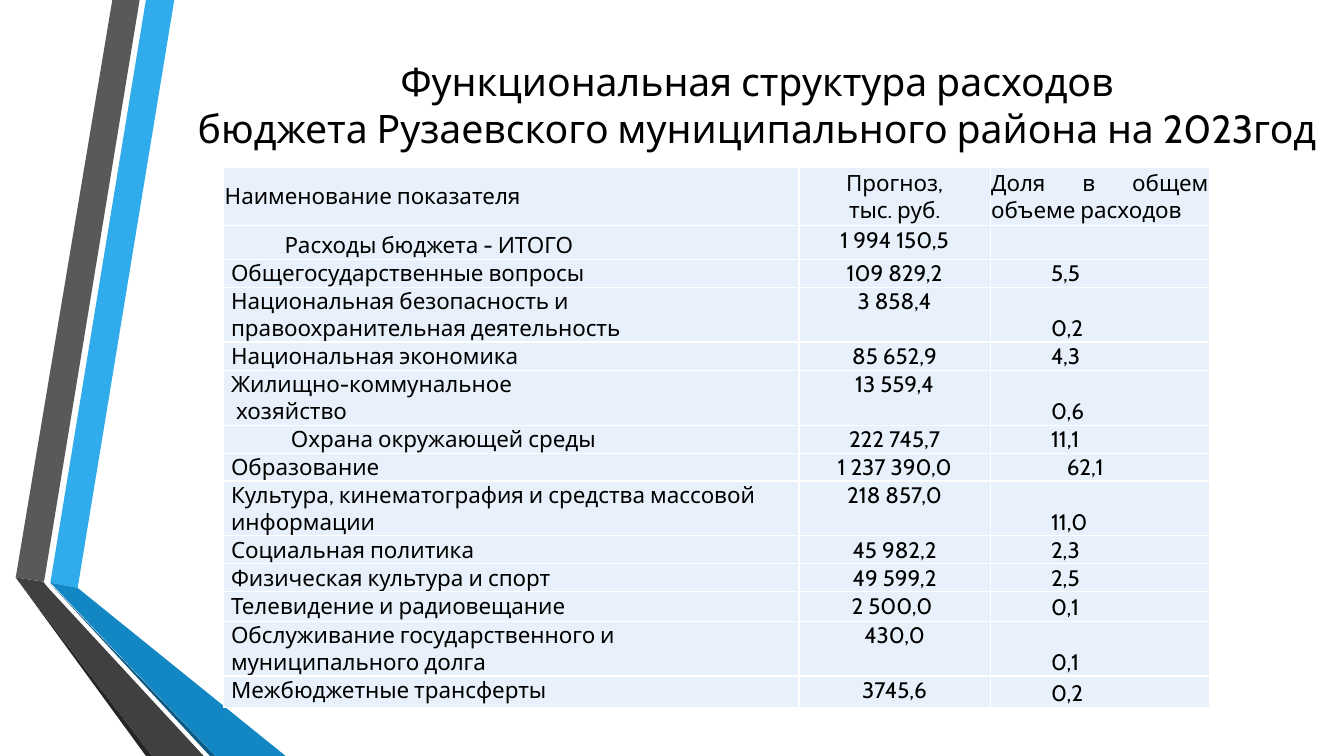
"""Build the slide on the functional structure of district budget spending."""
from lxml import etree
from pptx import Presentation
from pptx.dml.color import RGBColor
from pptx.enum.text import MSO_ANCHOR, PP_ALIGN
from pptx.oxml.ns import qn
from pptx.util import Pt

PX = 9525
FONT = "Cabin"
TOP, MIDDLE, BOTTOM = MSO_ANCHOR.TOP, MSO_ANCHOR.MIDDLE, MSO_ANCHOR.BOTTOM
LEFT, CENTER, JUSTIFY = PP_ALIGN.LEFT, PP_ALIGN.CENTER, PP_ALIGN.JUSTIFY
COLORS = {
    "text": "000000", "cell": "E8F1FB", "border": "FFFFFF",
    "sky": "30ACEC", "gray": "595959", "black": "262626",
    "navy": "0C5A82", "blue": "1287C3", "coal": "404040",
}


def add_run(para, text, size):
    run = para.add_run()
    run.text = text
    run.font.name = FONT
    run.font.size = Pt(size)
    run.font.color.rgb = RGBColor.from_string(COLORS["text"])


def add_borders(cell):
    props = cell._tc.get_or_add_tcPr()
    for index, side in enumerate(("lnL", "lnR", "lnT", "lnB")):
        line = etree.Element(qn(f"a:{side}"), w=str(Pt(1)))
        fill = etree.SubElement(line, qn("a:solidFill"))
        etree.SubElement(fill, qn("a:srgbClr"), val=COLORS["border"])
        props.insert(index, line)


deck = Presentation()
deck.slide_width, deck.slide_height = 1280 * PX, 720 * PX
slide = deck.slides.add_slide(deck.slide_layouts[6])

ribbons = [
    ("sky", [(48, 555), (74, 560), (166, 0), (139, 0)]),
    ("gray", [(133, 0), (107, 0), (15, 550), (42, 554)]),
    ("black", [(15, 550), (139, 720), (145, 720)]),
    ("navy", [(48, 556), (200, 720), (205, 720)]),
    ("blue", [(48, 555), (205, 720), (272, 720), (74, 560)]),
    ("coal", [(194, 720), (46, 560), (41, 554), (15, 550), (145, 720)]),
]
for color, points in ribbons:
    outline = slide.shapes.build_freeform(*points[0], scale=PX)
    outline.add_line_segments(points[1:], close=True)
    ribbon = outline.convert_to_shape()
    ribbon.shadow.inherit = False
    ribbon.fill.solid()
    ribbon.fill.fore_color.rgb = RGBColor.from_string(COLORS[color])
    ribbon.line.fill.background()

title = slide.shapes.add_textbox(173 * PX, 16 * PX, 1096 * PX, 166 * PX)
frame = title.text_frame
frame.word_wrap = True
frame.vertical_anchor = MIDDLE
para = frame.paragraphs[0]
para.alignment = CENTER
add_run(para, "Функциональная структура расходов", 28)
para.add_line_break()
add_run(para, "бюджета Рузаевского муниципального района на 2023год", 28)

rows = [
    (56, "Наименование показателя", "Прогноз,\nтыс. руб.", "Доля в общем объеме расходов"),
    (32, "Расходы бюджета - ИТОГО", "1 994 150,5", ""),
    (25, "Общегосударственные вопросы", "109 829,2", "5,5"),
    (39, "Национальная безопасность и правоохранительная деятельность", "3 858,4", "0,2"),
    (27, "Национальная экономика", "85 652,9", "4,3"),
    (37, "Жилищно-коммунальное\n хозяйство", "13 559,4", "0,6"),
    (26, "Охрана окружающей среды", "222 745,7", "11,1"),
    (19, "Образование", "1 237 390,0", "62,1"),
    (37, "Культура, кинематография и средства массовой информации", "218 857,0", "11,0"),
    (23, "Социальная политика", "45 982,2", "2,3"),
    (24, "Физическая культура и спорт", "49 599,2", "2,5"),
    (28, "Телевидение и радиовещание", "2 500,0 ", "0,1"),
    (45, "Обслуживание государственного и муниципального долга", "430,0", "0,1"),
    (30, "Межбюджетные трансферты", "3745,6", "0,2"),
]
widths = [548, 182, 209]
height = sum(row[0] for row in rows)
table = slide.shapes.add_table(
    len(rows), 3, 213 * PX, 159 * PX, sum(widths) * PX, height * PX).table
table.first_row = table.horz_banding = False
for col, width in enumerate(widths):
    table.columns[col].width = width * PX

for row, (tall, *texts) in enumerate(rows):
    table.rows[row].height = tall * PX
    for col, text in enumerate(texts):
        cell = table.cell(row, col)
        indented = row > 0 and (col == 2 or col == 0 and row in (1, 6))
        inner = col == 1 and 2 <= row <= 12
        cell.margin_left = (7 if col == 0 and row > 1 else 6 if inner else 1) * PX
        cell.margin_right = (6 if inner else 1) * PX
        cell.margin_top, cell.margin_bottom = PX, 0
        cell.vertical_anchor = MIDDLE if row == 0 else BOTTOM if indented else TOP
        cell.fill.solid()
        cell.fill.fore_color.rgb = RGBColor.from_string(COLORS["cell"])
        add_borders(cell)
        for index, line in enumerate(text.split("\n")):
            frame = cell.text_frame
            para = frame.add_paragraph() if index else frame.paragraphs[0]
            justified = row == 0 or indented and col == 0
            para.alignment = CENTER if col == 1 else JUSTIFY if justified else LEFT
            if indented:
                indent = 72 if text == "62,1" else 57
                para._p.get_or_add_pPr().set("indent", str(indent * PX))
            add_run(para, line, 16)

deck.save("out.pptx")
